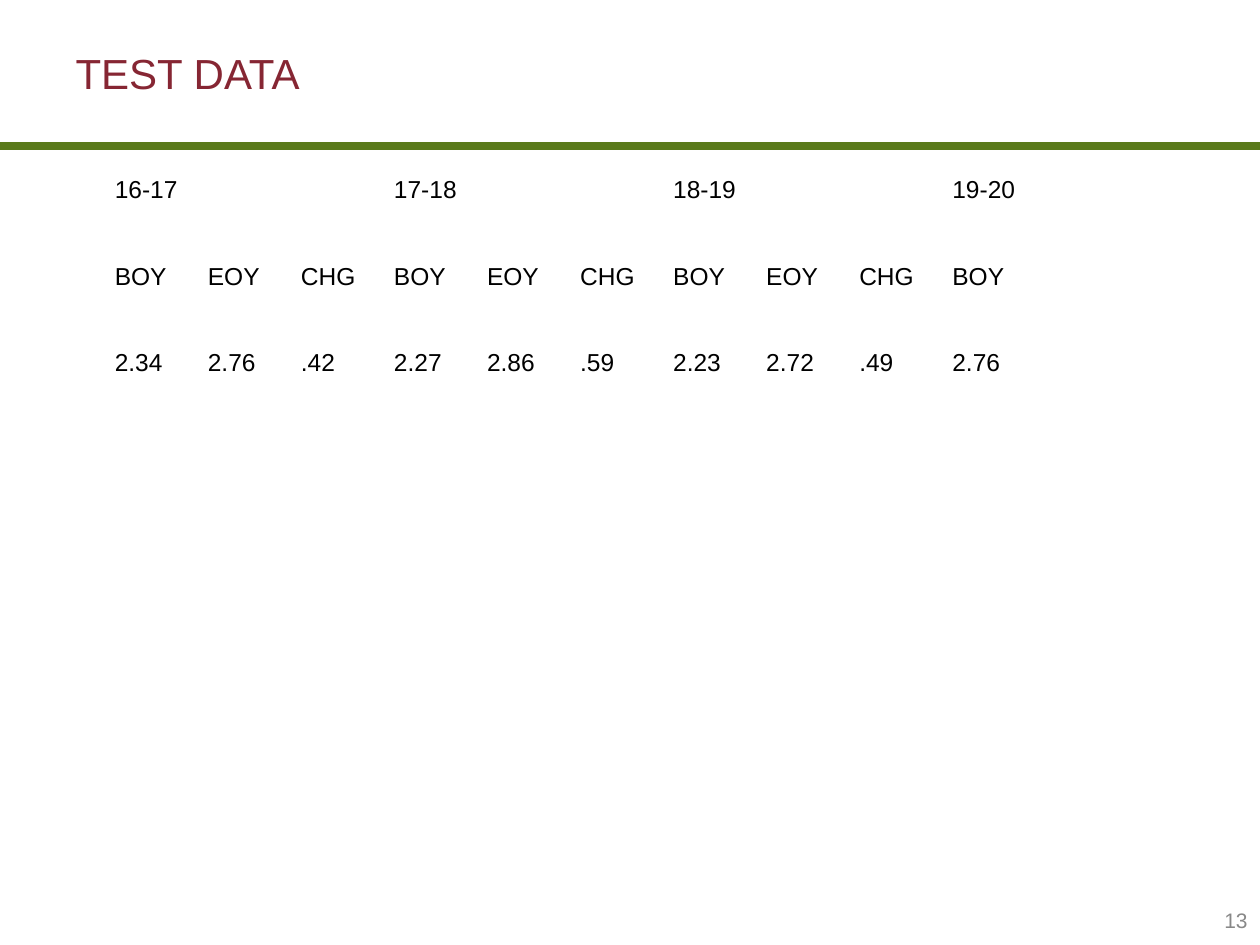
from pptx import Presentation
from pptx import util as u
from pptx.dml.color import RGBColor
from pptx.enum import shapes, text
from pptx.oxml.ns import qn
from lxml import etree

Pt = u.Pt
YEARS = ["16-17", "17-18", "18-19", "19-20"]
TERMS = ["BOY", "EOY", "CHG"]
SCORES = ["2.34", "2.76", ".42", "2.27", "2.86", ".59",
          "2.23", "2.72", ".49", "2.76"]
COL, ROW = 53.2, 49.5


def color(code):
    return RGBColor.from_string(code)


def write(frame, words, size, code, align=text.PP_ALIGN.LEFT):
    frame.text = words
    para = frame.paragraphs[0]
    para.alignment = align
    form = {"name": "Arial", "size": Pt(size), "bold": False}
    for key, val in form.items():
        setattr(para.font, key, val)
    para.font.color.rgb = color(code)


def place(shape, *box):
    for key, val in zip(("left", "top", "width", "height"), box):
        setattr(shape, key, Pt(val))


def add_title(slide):
    title = slide.shapes.title
    place(title, 36, 0, 648, 83.5)
    write(title.text_frame, "TEST DATA", 24, "862633")
    title.text_frame.vertical_anchor = text.MSO_ANCHOR.MIDDLE


def add_rule(slide):
    rule = slide.shapes.add_connector(
        shapes.MSO_CONNECTOR.STRAIGHT, 0, Pt(83.5), Pt(720), Pt(83.5))
    rule.line.width = Pt(5)
    rule.line.color.rgb = color("5A7A1B")
    etree.SubElement(rule._element.spPr, qn("a:effectLst"))


def add_number(slide):
    box = slide.shapes.add_textbox(Pt(552), Pt(511), Pt(168), Pt(29))
    box.text_frame.word_wrap = True
    box.text_frame.vertical_anchor = text.MSO_ANCHOR.MIDDLE
    write(box.text_frame, "13", 12, "888888", text.PP_ALIGN.RIGHT)


def add_scores(slide):
    """Add the table; each full year spans its first two columns."""
    count, step = len(SCORES), len(TERMS)
    heads = [YEARS[i // step] if i % step == 0 else "" for i in range(count)]
    terms = [TERMS[i % step] for i in range(count)]
    rows = [heads, terms, SCORES]
    table = slide.shapes.add_table(
        len(rows), count, Pt(58.4), Pt(97.2),
        Pt(COL * count), Pt(ROW * len(rows))).table
    table.first_row = table.horz_banding = False
    for col in table.columns:
        col.width = Pt(COL)
    for line, row in zip(rows, table.rows):
        row.height = Pt(ROW)
        for words, cell in zip(line, row.cells):
            cell.fill.background()
            if words:
                write(cell.text_frame, words, 14, "000000")
    for left in range(0, count - 1, step):
        table.cell(0, left).merge(table.cell(0, left + 1))


def main():
    deck = Presentation()
    deck.slide_width, deck.slide_height = Pt(720), Pt(540)
    slide = deck.slides.add_slide(deck.slide_layouts[5])
    for add in (add_rule, add_number, add_title, add_scores):
        add(slide)
    deck.save("out.pptx")


if __name__ == "__main__":
    main()
